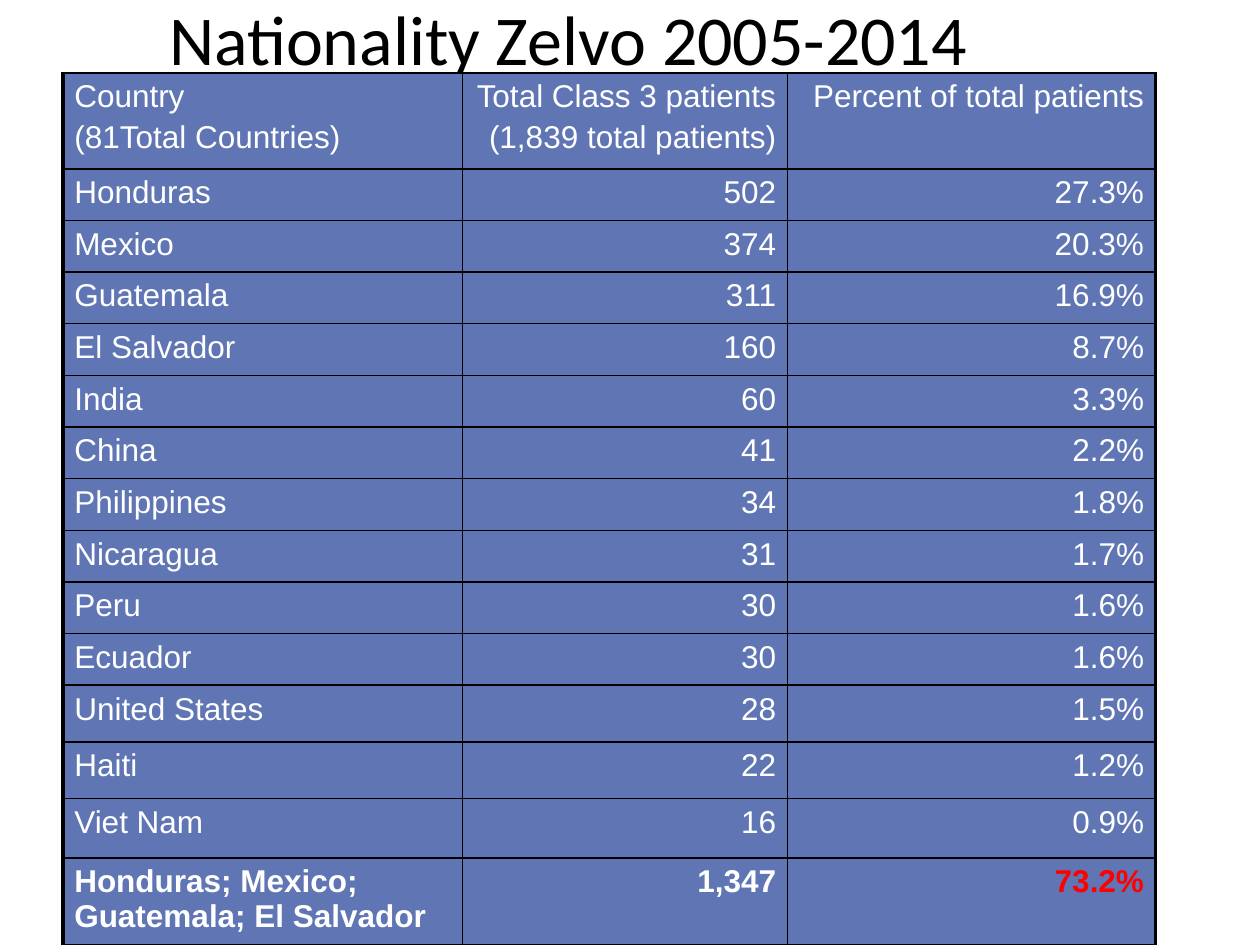
from lxml import etree
from pptx import Presentation
from pptx.dml.color import RGBColor
from pptx.enum.text import MSO_ANCHOR, PP_ALIGN
from pptx.oxml.ns import qn
from pptx.util import Inches, Pt

LEFT, CENTER, RIGHT = PP_ALIGN.LEFT, PP_ALIGN.CENTER, PP_ALIGN.RIGHT
MIDDLE = MSO_ANCHOR.MIDDLE
BLACK, WHITE, RED, BLUE = "000000", "FFFFFF", "FF0000", "6076B4"
THIN, THICK = 1, 2.25


def color(code):
    return RGBColor.from_string(code)


def border(cell, side, width):
    line = etree.SubElement(cell._tc.get_or_add_tcPr(), qn("a:ln" + side),
                            w=str(Pt(width)))
    fill = etree.SubElement(line, qn("a:solidFill"))
    etree.SubElement(fill, qn("a:srgbClr"), val=BLACK)


deck = Presentation()
deck.slide_width, deck.slide_height = Inches(10), Inches(7.5)
slide = deck.slides.add_slide(deck.slide_layouts[5])

# Title
title = slide.shapes.title
title.left, title.top = Inches(0.26), Inches(-0.33)
title.width, title.height = Inches(8.5), Inches(1.25)
title.text_frame.text = "Nationality Zelvo 2005-2014"
title.text_frame.vertical_anchor = MIDDLE
head = title.text_frame.paragraphs[0]
head.alignment = CENTER
head.font.name, head.font.size = "Calibri", Pt(40)
head.font.color.rgb = color(BLACK)

# Table content
rows = [
    ("Country\n(81Total Countries)",
     "Total Class 3 patients\n(1,839 total patients)",
     "Percent of total patients"),
    ("Honduras", "502", "27.3%"),
    ("Mexico", "374", "20.3%"),
    ("Guatemala", "311", "16.9%"),
    ("El Salvador", "160", "8.7%"),
    ("India", "60", "3.3%"),
    ("China", "41", "2.2%"),
    ("Philippines", "34", "1.8%"),
    ("Nicaragua", "31", "1.7%"),
    ("Peru", "30", "1.6%"),
    ("Ecuador", "30", "1.6%"),
    ("United States", "28", "1.5%"),
    ("Haiti", "22", "1.2%"),
    ("Viet Nam", "16", "0.9%"),
    ("Honduras; Mexico; Guatemala; El Salvador", "1,347", "73.2%"),
]
widths = [3.17, 2.58, 2.92]
heights = [0.76] + [0.41] * 10 + [0.45, 0.45, 0.47, 0.7]
last_row, last_col = len(rows) - 1, len(widths) - 1

# Table grid
table = slide.shapes.add_table(
    len(rows), len(widths), Inches(0.5), Inches(0.58),
    Inches(sum(widths)), Inches(sum(heights))).table
table.horz_banding = False
for col, width in zip(table.columns, widths):
    col.width = Inches(width)
for row, height in zip(table.rows, heights):
    row.height = Inches(height)

# Cells: thick outer edges at left, right and bottom
for r, row in enumerate(rows):
    for c, text in enumerate(row):
        cell = table.cell(r, c)
        border(cell, "L", THICK if c == 0 else THIN)
        border(cell, "R", THICK if c == last_col else THIN)
        border(cell, "T", THIN)
        border(cell, "B", THICK if r == last_row else THIN)
        cell.fill.solid()
        cell.fill.fore_color.rgb = color(BLUE)
        cell.margin_left = cell.margin_right = Inches(0.09)
        cell.margin_top = cell.margin_bottom = Inches(0.05)
        cell.text = text
        for i, para in enumerate(cell.text_frame.paragraphs):
            para.alignment = RIGHT if c else LEFT
            para.space_before = Pt(3 if i else 0)
            para.font.name, para.font.size = "Arial", Pt(18)
            para.font.bold = r == last_row
            total = r == last_row and c == last_col
            para.font.color.rgb = color(RED if total else WHITE)

deck.save("out.pptx")
